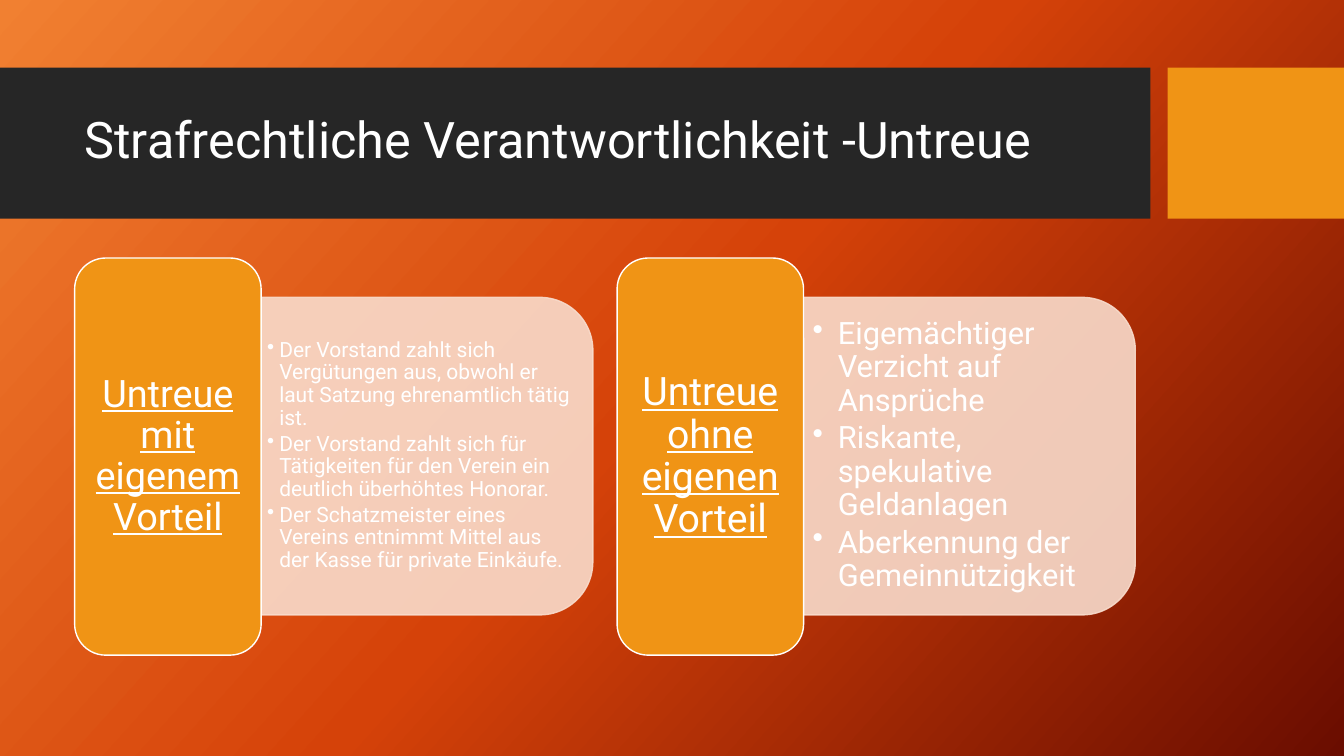
import dataclasses

import lxml.etree
import pptx
import pptx.dml.color
import pptx.enum.shapes
import pptx.enum.text
import pptx.oxml.ns
import pptx.util

Inches = pptx.util.Inches
Pt = pptx.util.Pt
RGB = pptx.dml.color.RGBColor
Kind = pptx.enum.shapes.MSO_SHAPE
Align = pptx.enum.text.PP_ALIGN
qn = pptx.oxml.ns.qn

WHITE = RGB(0xFF, 0xFF, 0xFF)
DARK = RGB(0x26, 0x26, 0x26)
AMBER = RGB(0xF0, 0x94, 0x15)
PEACH = RGB(0xF9, 0xDC, 0xCC)
GLOW = ((0, RGB(0xF1, 0x80, 0x31)), (50, RGB(0xD5, 0x42, 0x09)),
        (100, RGB(0x6A, 0x0D, 0x00)))
FONT = "Roboto"


@dataclasses.dataclass
class Box:
    left: float
    top: float
    width: float
    height: float

    def size(self) -> list:
        return [Inches(v) for v in (self.left, self.top, self.width, self.height)]


@dataclasses.dataclass
class Style:
    size: float
    pad: tuple = (0.1, 0.05)
    align: Align = Align.LEFT
    line: bool = False
    dent: float = 0
    after: float = 0


@dataclasses.dataclass
class Panel:
    left: float
    head: str
    points: list
    top: Style
    body: Style


PANELS = [
    Panel(0.74, "Untreue mit eigenem Vorteil",
          ["Der Vorstand zahlt sich Vergütungen aus, obwohl er laut Satzung ehrenamtlich tätig ist.",
           "Der Vorstand zahlt sich für Tätigkeiten für den Verein ein deutlich überhöhtes Honorar.",
           "Der Schatzmeister eines Vereins entnimmt Mittel aus der Kasse für private Einkäufe."],
          Style(27, (0.11, 0.06), Align.CENTER, True),
          Style(15, (0.06, 0.03), dent=0.12, after=2.25)),
    Panel(6.12, "Untreue ohne eigenen Vorteil",
          ["Eigemächtiger Verzicht auf Ansprüche",
           "Riskante, spekulative Geldanlagen",
           "Aberkennung der Gemeinnützigkeit"],
          Style(28, (0.12, 0.06), Align.CENTER, True),
          Style(22, (0.09, 0.05), dent=0.25, after=3.3)),
]


def apply(item, values: dict) -> None:
    for name, value in values.items():
        setattr(item, name, value)


def fade(color, share: int) -> None:
    """Give a solid colour its opacity in percent."""
    tag = color.find(".//" + qn("a:srgbClr"))
    lxml.etree.SubElement(tag, qn("a:alpha"), val=str(share * 1000))


def paint(slide, kind: Kind, box: Box, fill: RGB, edge: RGB | None = None):
    shape = slide.shapes.add_shape(kind, *box.size())
    shape.shadow.inherit = False
    shape.fill.solid()
    shape.fill.fore_color.rgb = fill
    if edge is None:
        shape.line.fill.background()
    else:
        shape.line.color.rgb = edge
        shape.line.width = Pt(1)
    return shape


def write(slide, box: Box, lines: list, style: Style) -> None:
    frame = slide.shapes.add_textbox(*box.size()).text_frame
    side, edge = map(Inches, style.pad)
    apply(frame, {
        "word_wrap": True,
        "vertical_anchor": pptx.enum.text.MSO_ANCHOR.MIDDLE,
        "margin_left": side, "margin_right": side,
        "margin_top": edge, "margin_bottom": edge,
    })
    for i, line in enumerate(lines):
        para = frame.add_paragraph() if i else frame.paragraphs[0]
        if style.dent:
            para.level = 1
            props = para._p.get_or_add_pPr()
            props.set("marL", str(Inches(style.dent)))
            props.set("indent", str(-Inches(style.dent)))
            lxml.etree.SubElement(props, qn("a:buChar"), char="•")
        apply(para, {"alignment": style.align, "line_spacing": 0.9,
                     "space_after": Pt(style.after)})
        run = para.add_run()
        run.text = line
        apply(run.font, {"name": FONT, "size": Pt(style.size),
                         "underline": style.line})
        run.font.color.rgb = WHITE


def shade(slide) -> None:
    fill = slide.background.fill
    fill.gradient()
    fill.gradient_angle = 360 - 42
    stops = slide._element.find(".//" + qn("a:gsLst"))
    for stop in list(stops):
        stops.remove(stop)
    for place, color in GLOW:
        stop = lxml.etree.SubElement(stops, qn("a:gs"), pos=str(place * 1000))
        lxml.etree.SubElement(stop, qn("a:srgbClr"), val=str(color))


def draw(slide, panel: Panel) -> None:
    # Pale body, turned so that its round corners face right
    edge = panel.left + 1.85
    body = paint(slide, Kind.ROUND_2_SAME_RECTANGLE,
                 Box(edge + 0.07, 2.88, 3.15, 3.29), PEACH, PEACH)
    body.rotation = 90
    props = body._element.spPr
    fade(props.find(qn("a:solidFill")), 90)
    fade(props.find(qn("a:ln")), 90)
    write(slide, Box(edge, 3.1, 3.13, 2.84), panel.points, panel.body)
    # Amber heading card
    paint(slide, Kind.ROUNDED_RECTANGLE,
          Box(panel.left, 2.56, 1.85, 3.94), AMBER, WHITE)
    write(slide, Box(panel.left + 0.09, 2.65, 1.67, 3.76), [panel.head], panel.top)


def main() -> None:
    deck = pptx.Presentation()
    apply(deck, {"slide_width": Inches(13.33), "slide_height": Inches(7.5)})
    slide = deck.slides.add_slide(deck.slide_layouts[6])
    shade(slide)
    # Title band
    paint(slide, Kind.RECTANGLE, Box(0, 0.67, 11.41, 1.5), DARK)
    paint(slide, Kind.RECTANGLE, Box(11.58, 0.67, 1.75, 1.5), AMBER)
    write(slide, Box(0.74, 0.82, 10.51, 1.18),
          ["Strafrechtliche Verantwortlichkeit -Untreue"], Style(36))
    # Two panels
    for panel in PANELS:
        draw(slide, panel)
    deck.save("out.pptx")


if __name__ == "__main__":
    main()
